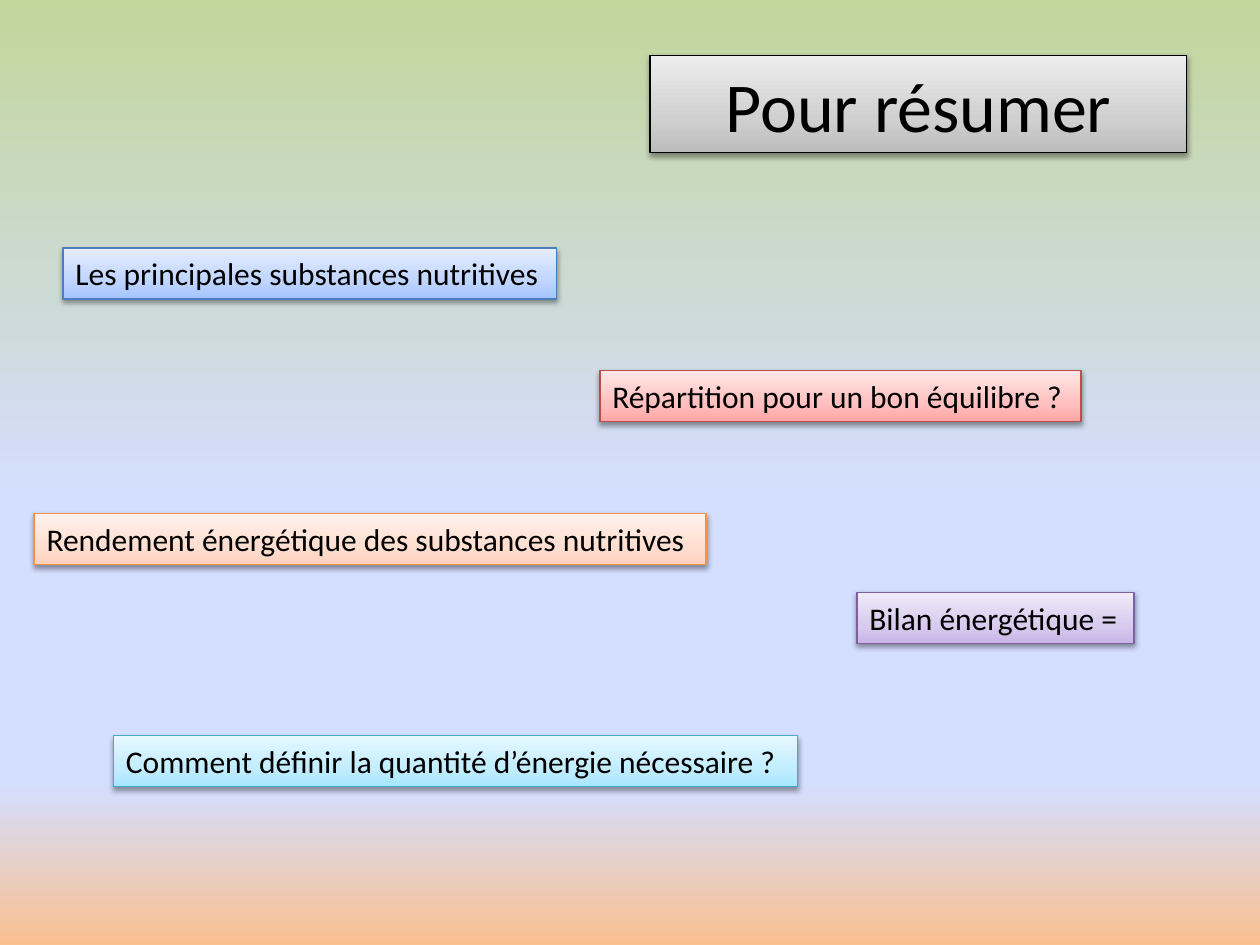
from lxml import etree
from pptx import Presentation
from pptx.dml.color import RGBColor
from pptx.enum.shapes import MSO_SHAPE
from pptx.enum.text import MSO_ANCHOR, MSO_AUTO_SIZE, PP_ALIGN
from pptx.oxml.ns import qn
from pptx.util import Pt

RECTANGLE = MSO_SHAPE.RECTANGLE
TOP, MIDDLE = MSO_ANCHOR.TOP, MSO_ANCHOR.MIDDLE
LEFT, CENTER = PP_ALIGN.LEFT, PP_ALIGN.CENTER
NO_AUTOFIT = MSO_AUTO_SIZE.NONE

COLORS = {
    "text": "000000",
    "background": ["C3D69B", "D4DEFF", "D4DEFF", "FAC090"],
    "grey": ["BCBCBC", "D0D0D0", "EDEDED"],
    "blue": ["A4C4FF", "BFD4FF", "E6EEFF"],
    "red": ["FFA6A5", "FFC0BF", "FFE7E7"],
    "orange": ["FFD2BD", "FFDED0", "FFF2ED"],
    "purple": ["C9B5E8", "D8CBEE", "F0EAF9"],
    "cyan": ["A7E6FF", "C1EDFF", "E7F8FF"],
    "grey line": "000000",
    "blue line": "4B7EBC",
    "red line": "BF4C48",
    "orange line": "F69240",
    "purple line": "7D60A0",
    "cyan line": "46AAC5",
}


def fill_gradient(fill, element, colors, positions, angle):
    fill.gradient()
    fill.gradient_angle = angle
    stops = element.find(".//" + qn("a:gsLst"))
    for stop in list(stops):
        stops.remove(stop)
    for color, position in zip(colors, positions):
        stop = etree.SubElement(stops, qn("a:gs"), pos=str(position * 1000))
        etree.SubElement(stop, qn("a:srgbClr"), val=color)


def style_box(shape, text, theme, size, alignment, anchor):
    fill_gradient(shape.fill, shape.element, COLORS[theme], [0, 35, 100], 90)
    shape.line.color.rgb = RGBColor.from_string(COLORS[theme + " line"])
    shape.line.width = Pt(0.75)
    shape.shadow.inherit = False
    effects = shape.element.find(".//" + qn("a:effectLst"))
    shadow = etree.SubElement(
        effects, qn("a:outerShdw"), blurRad=str(Pt(3.15)), dist=str(Pt(1.57)),
        dir="5400000", rotWithShape="0")
    color = etree.SubElement(shadow, qn("a:srgbClr"), val=COLORS["text"])
    etree.SubElement(color, qn("a:alpha"), val="38000")
    frame = shape.text_frame
    frame_format = {
        "text": text, "word_wrap": True, "auto_size": NO_AUTOFIT, "vertical_anchor": anchor,
        "margin_left": Pt(7.2), "margin_right": Pt(7.2),
        "margin_top": Pt(3.6), "margin_bottom": Pt(3.6),
    }
    for name, value in frame_format.items():
        setattr(frame, name, value)
    paragraph = frame.paragraphs[0]
    paragraph.alignment = alignment
    font = paragraph.runs[0].font
    for name, value in {"name": "Calibri", "size": Pt(size)}.items():
        setattr(font, name, value)
    font.color.rgb = RGBColor.from_string(COLORS["text"])


presentation = Presentation()
presentation.slide_width, presentation.slide_height = Pt(720), Pt(540)
slide = presentation.slides.add_slide(presentation.slide_layouts[5])
fill_gradient(slide.background.fill, slide.element, COLORS["background"], [0, 53, 83, 100], 270)

title = slide.shapes.title
title_position = {"left": 371.5, "top": 31.7, "width": 306.7, "height": 55.6}
for name, value in title_position.items():
    setattr(title, name, Pt(value))
style_box(title, "Pour résumer", "grey", 40, CENTER, MIDDLE)

topics = [
    ("Les principales substances nutritives", "blue", 36, 141.8, 282.2),
    ("Répartition pour un bon équilibre ?", "red", 342.8, 211.6, 275),
    ("Rendement énergétique des substances nutritives", "orange", 19.5, 293.6, 384),
    ("Bilan énergétique =", "purple", 489.7, 338.5, 158.4),
    ("Comment définir la quantité d’énergie nécessaire ?", "cyan", 64.9, 420.4, 391),
]
for text, theme, left, top, width in topics:
    topic = slide.shapes.add_shape(RECTANGLE, Pt(left), Pt(top), Pt(width), Pt(29.1))
    style_box(topic, text, theme, 18, LEFT, TOP)

presentation.save("out.pptx")
